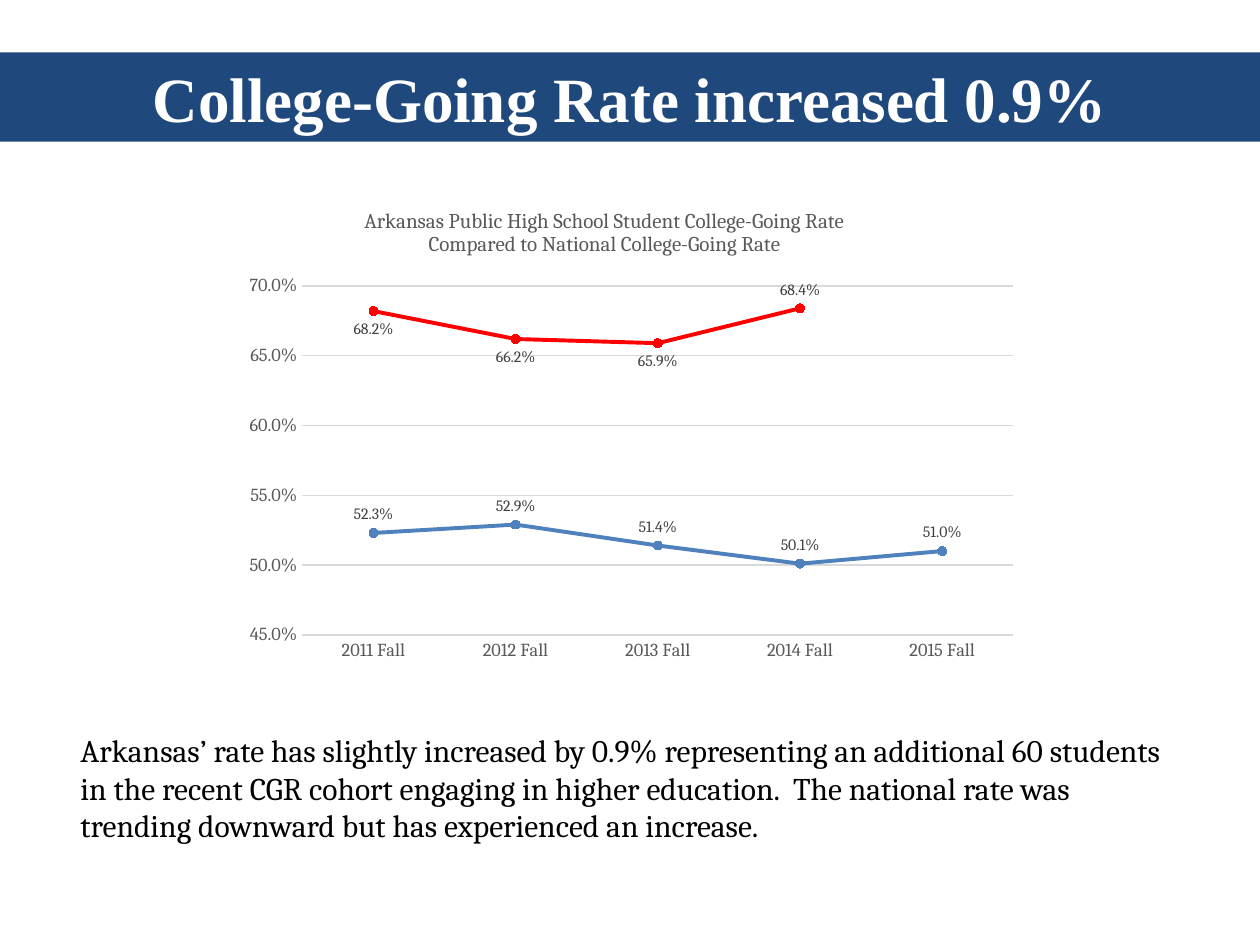
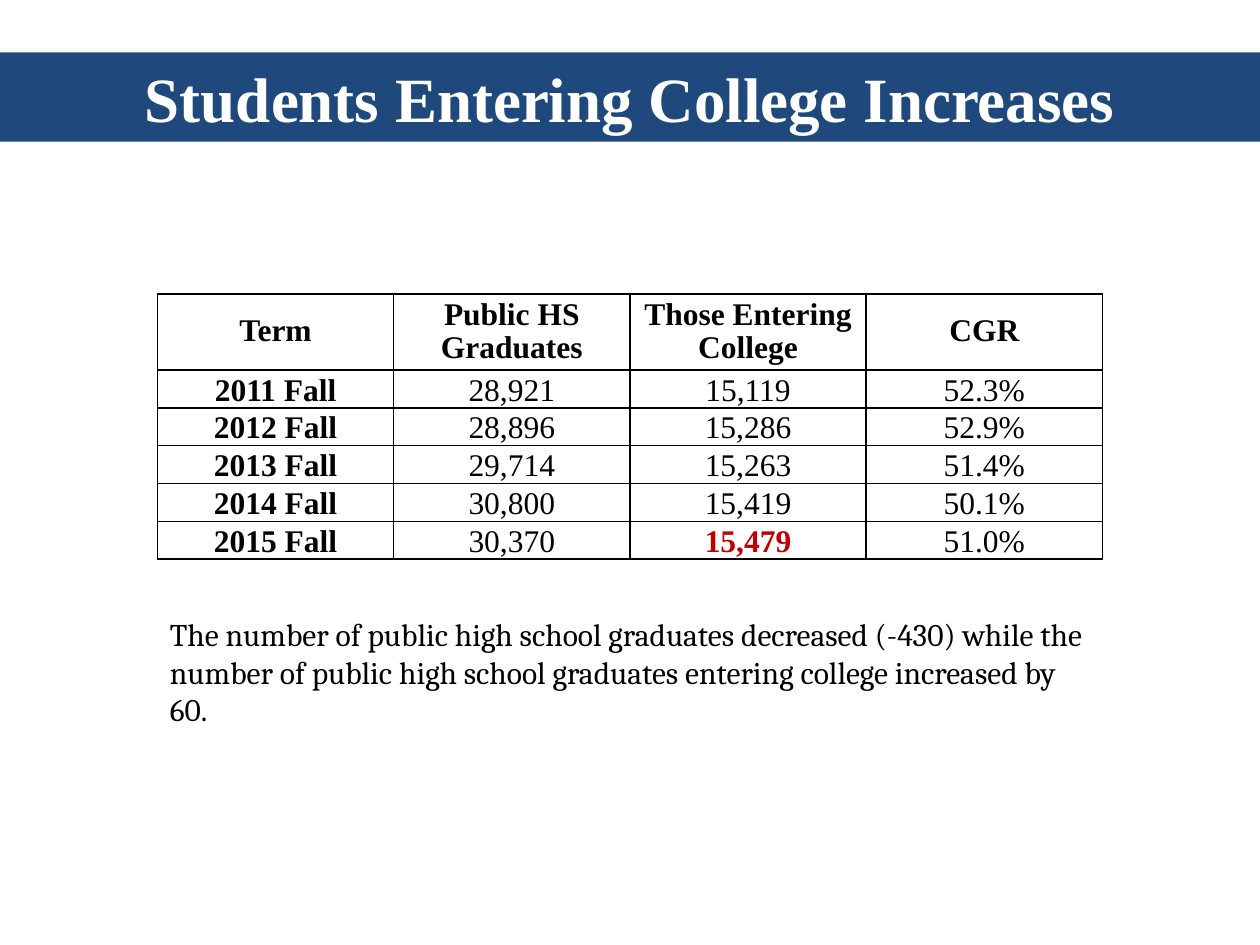
from lxml import etree
from pptx import Presentation
from pptx.chart.data import CategoryChartData
from pptx.dml.color import RGBColor
from pptx.enum.chart import XL_CHART_TYPE, XL_LABEL_POSITION, XL_MARKER_STYLE, XL_TICK_MARK
from pptx.enum.text import MSO_ANCHOR, MSO_AUTO_SIZE, PP_ALIGN
from pptx.oxml import parse_xml
from pptx.oxml.ns import nsdecls, qn
from pptx.util import Pt

# Content
RATE_TITLE = "College-Going Rate increased 0.9%"
RATE_CAPTION = (
    "Arkansas’ rate has slightly increased by 0.9% representing an additional 60 students "
    "in the recent CGR cohort engaging in higher education.  The national rate was "
    "trending downward but has experienced an increase."
)
CHART_TITLE = (
    "Arkansas Public High School Student College-Going Rate\n"
    "Compared to National College-Going Rate"
)
TERMS = ["2011 Fall", "2012 Fall", "2013 Fall", "2014 Fall", "2015 Fall"]
NATIONAL_RATES = [0.682, 0.662, 0.659, 0.684, None]
ARKANSAS_RATES = [0.523, 0.529, 0.514, 0.501, 0.51]
LABELS_BELOW = [0, 1, 2]  # national points labelled under the line

ENTERING_TITLE = "Students Entering College Increases"
ENTERING_CAPTION = (
    "The number of public high school graduates decreased (-430) while the number of "
    "public high school graduates entering college increased by 60."
)
HEADINGS = ["Term", "Public HS Graduates", "Those Entering College", "CGR"]
GRADUATES = ["28,921", "28,896", "29,714", "30,800", "30,370"]
ENTERING = ["15,119", "15,286", "15,263", "15,419", "15,479"]
HIGHLIGHT = (5, 2)  # row, column

# Shared style
BAND_BLUE = RGBColor(0x1F, 0x49, 0x7D)
WHITE = RGBColor(0xFF, 0xFF, 0xFF)
BLACK = RGBColor(0, 0, 0)
RED = RGBColor(0xFF, 0, 0)
LINE_BLUE = RGBColor(0x4F, 0x81, 0xBD)
DARK_RED = RGBColor(0xC0, 0, 0)
AXIS_GREY = RGBColor(0x59, 0x59, 0x59)
LABEL_GREY = RGBColor(0x40, 0x40, 0x40)
GRID_GREY = RGBColor(0xD9, 0xD9, 0xD9)
SERIF, TIMES = "Cambria", "Times New Roman"
RATE_FORMAT = "0.0%"

CENTER = PP_ALIGN.CENTER
MIDDLE, BOTTOM = MSO_ANCHOR.MIDDLE, MSO_ANCHOR.BOTTOM
ABOVE, BELOW = XL_LABEL_POSITION.ABOVE, XL_LABEL_POSITION.BELOW
NO_TICK = XL_TICK_MARK.NONE
TITLE_ONLY = 5
SLIDE_WIDTH, SLIDE_HEIGHT = Pt(720), Pt(540)


def style_font(font, name, size, color, bold=False):
    font.name, font.size, font.bold = name, Pt(size), bold
    font.color.rgb = color


def add_titled_slide(presentation, title):
    slide = presentation.slides.add_slide(presentation.slide_layouts[TITLE_ONLY])
    band = slide.shapes.title
    band.left, band.top, band.width, band.height = 0, Pt(30), SLIDE_WIDTH, Pt(50.9)
    band.fill.solid()
    band.fill.fore_color.rgb = BAND_BLUE
    frame = band.text_frame
    frame.text = title
    frame.auto_size = MSO_AUTO_SIZE.NONE
    frame.vertical_anchor = MIDDLE
    paragraph = frame.paragraphs[0]
    paragraph.alignment = CENTER
    style_font(paragraph.font, TIMES, 36, WHITE, True)
    return slide


def add_caption(slide, text, left, top, width):
    frame = slide.shapes.add_textbox(Pt(left), Pt(top), Pt(width), Pt(72.7)).text_frame
    frame.word_wrap = True
    frame.text = text
    style_font(frame.paragraphs[0].font, SERIF, 18, BLACK)


def set_layout(parent, index, inner=False, **fractions):
    """Place a chart part by fractions of the chart area."""
    for old in parent.findall(qn("c:layout")):
        parent.remove(old)
    layout = parse_xml(f"<c:layout {nsdecls('c')}><c:manualLayout/></c:layout>")
    settings = [("layoutTarget", "inner")] if inner else []
    settings += [("xMode", "edge"), ("yMode", "edge"), *fractions.items()]
    for tag, value in settings:
        etree.SubElement(layout[0], qn(f"c:{tag}")).set("val", str(value))
    parent.insert(index, layout)


def style_series(series, color):
    series.smooth = False
    series.format.line.color.rgb = color
    series.format.line.width = Pt(2.25)
    series.marker.style = XL_MARKER_STYLE.CIRCLE
    series.marker.size = 5
    series.marker.format.fill.solid()
    series.marker.format.fill.fore_color.rgb = color
    series.marker.format.line.color.rgb = color
    labels = series.data_labels
    labels.show_value = True
    labels.position = ABOVE
    labels.number_format, labels.number_format_is_linked = RATE_FORMAT, False
    style_font(labels.font, SERIF, 9, LABEL_GREY)


def add_rate_chart(slide):
    data = CategoryChartData(number_format=RATE_FORMAT)
    data.categories = TERMS
    data.add_series("Series 1", NATIONAL_RATES)
    data.add_series("Series 2", ARKANSAS_RATES)
    chart = slide.shapes.add_chart(
        XL_CHART_TYPE.LINE_MARKERS, Pt(133.2), Pt(108), Pt(455), Pt(275.8), data
    ).chart
    chart.has_legend = False
    style_font(chart.font, SERIF, 10, BLACK)

    # Chart title and plot position
    title = chart.chart_title
    title.text_frame.text = CHART_TITLE
    for paragraph in title.text_frame.paragraphs:
        style_font(paragraph.font, SERIF, 12, AXIS_GREY)
    set_layout(title._element, 1, x=0.16, y=0.03)
    plot_area = chart._chartSpace.chart.plotArea
    set_layout(plot_area, 0, inner=True, x=0.087, y=0.201, w=0.893, h=0.723)

    # Axes
    terms, rates = chart.category_axis, chart.value_axis
    for axis in (terms, rates):
        axis.major_tick_mark = axis.minor_tick_mark = NO_TICK
        style_font(axis.tick_labels.font, SERIF, 10.5, AXIS_GREY)
    rates.minimum_scale, rates.maximum_scale, rates.major_unit = 0.45, 0.7, 0.05
    rates.tick_labels.number_format = RATE_FORMAT
    rates.tick_labels.number_format_is_linked = False
    rates.format.line.fill.background()
    for line in (terms.format.line, rates.major_gridlines.format.line):
        line.color.rgb = GRID_GREY
        line.width = Pt(0.75)

    # Lines and labels
    plot = chart.plots[0]
    plot.vary_by_categories = False
    for series, color in zip(plot.series, (RED, LINE_BLUE)):
        style_series(series, color)
    for index in LABELS_BELOW:
        label = plot.series[0].points[index].data_label
        style_font(label.font, SERIF, 9, LABEL_GREY)
        label.position = BELOW


def add_cell_borders(cell):
    properties = cell._tc.get_or_add_tcPr()
    for index, side in enumerate("LRTB"):
        properties.insert(index, parse_xml(
            f'<a:ln{side} {nsdecls("a")} w="12700"><a:solidFill>'
            f'<a:srgbClr val="{BLACK}"/></a:solidFill></a:ln{side}>'
        ))


def add_entering_table(slide):
    rates = [f"{rate:.1%}" for rate in ARKANSAS_RATES]
    rows = [HEADINGS, *zip(TERMS, GRADUATES, ENTERING, rates)]
    heights = [43.4] + [21.65] * len(TERMS)
    table = slide.shapes.add_table(
        len(rows), len(HEADINGS), Pt(90), Pt(168), Pt(540), Pt(sum(heights))
    ).table
    table.first_row = table.horz_banding = False
    for row_index, (values, height) in enumerate(zip(rows, heights)):
        table.rows[row_index].height = Pt(height)
        heading = row_index == 0
        for column_index, value in enumerate(values):
            cell = table.cell(row_index, column_index)
            cell.text = value
            cell.fill.background()
            cell.margin_left = cell.margin_right = Pt(5)
            cell.margin_top = cell.margin_bottom = 0
            cell.vertical_anchor = MIDDLE if heading else BOTTOM
            highlighted = (row_index, column_index) == HIGHLIGHT
            paragraph = cell.text_frame.paragraphs[0]
            paragraph.alignment = CENTER
            if heading:
                paragraph.line_spacing = 0.95
            style_font(
                paragraph.font, TIMES, 18, DARK_RED if highlighted else BLACK,
                heading or column_index == 0 or highlighted,
            )
            add_cell_borders(cell)


def main():
    presentation = Presentation()
    presentation.slide_width, presentation.slide_height = SLIDE_WIDTH, SLIDE_HEIGHT

    # College-going rate
    slide = add_titled_slide(presentation, RATE_TITLE)
    add_caption(slide, RATE_CAPTION, 38.9, 414, 642.2)
    add_rate_chart(slide)

    # Students entering college
    slide = add_titled_slide(presentation, ENTERING_TITLE)
    add_entering_table(slide)
    add_caption(slide, ENTERING_CAPTION, 90, 347.8, 545.8)

    presentation.save("out.pptx")


if __name__ == "__main__":
    main()
